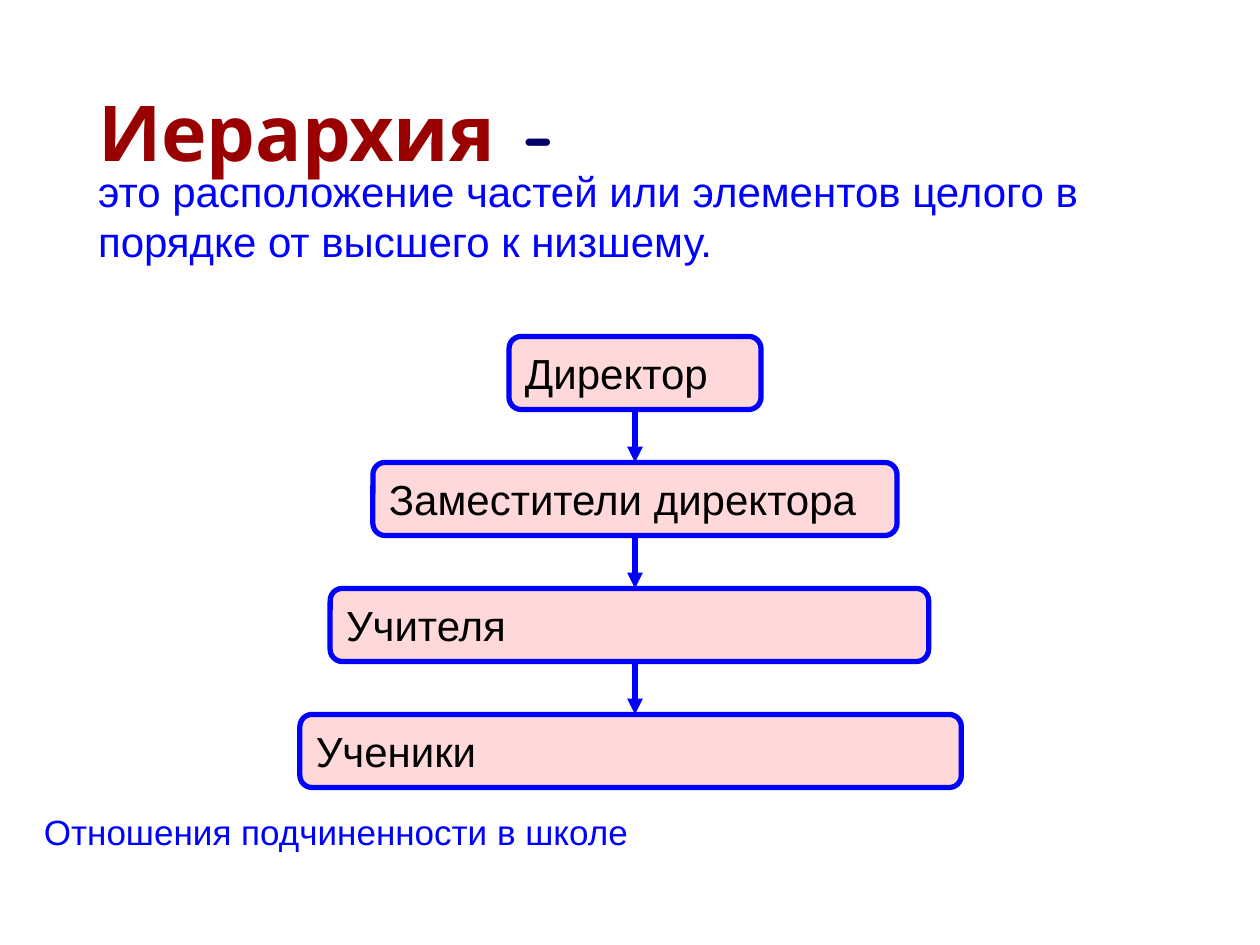
from pptx import Presentation
from pptx.dml.color import RGBColor
from pptx.enum.shapes import MSO_CONNECTOR as CONN, MSO_SHAPE as SHAPE
from pptx.enum.text import MSO_ANCHOR as ANCHOR, PP_ALIGN as ALIGN
from pptx.oxml.ns import qn
from pptx.util import Inches, Pt
from lxml.etree import SubElement

BLUE = RGBColor(0x00, 0x00, 0xFF)
NAVY = RGBColor(0x00, 0x00, 0x66)
RED = RGBColor(0x99, 0x00, 0x00)
PINK = RGBColor(0xFF, 0xD9, 0xD9)
BLACK = RGBColor(0x00, 0x00, 0x00)

AXIS = 5.04
FIRST_TOP = 2.67
STEP = 1
BOX_HEIGHT = 0.58
LEVELS = [
    ("Директор", 4.04, 2),
    ("Заместители директора", 2.96, 4.16),
    ("Учителя", 2.62, 4.75),
    ("Ученики", 2.38, 5.25),
]


class SlideBuilder:
    font = "Arial"
    title_font = "Comic Neue"
    line_width = Pt(3)

    def __init__(self, slide):
        self.slide = slide

    def style(self, r, size, color, font=None, bold=False):
        r.font.name = font or self.font
        r.font.size = Pt(size)
        r.font.bold = bold
        r.font.color.rgb = color

    def text(self, text, left, top, width, height, size, color,
             anchor=ANCHOR.MIDDLE, font=None, bold=False):
        sp = self.slide.shapes.add_textbox(
            Inches(left), Inches(top), Inches(width), Inches(height))
        tf = sp.text_frame
        tf.word_wrap = True
        tf.vertical_anchor = anchor
        tf.text = text
        p = tf.paragraphs[0]
        self.style(p.runs[0], size, color, font, bold)
        return p

    def title(self, term, dash):
        p = self.text(term, 0.68, 0.5, 8.5, 1.08, 44, RED,
                      font=self.title_font, bold=True)
        r = p.add_run()
        r.text = dash
        self.style(r, 44, NAVY, self.title_font, True)

    def caption(self, text):
        p = self.text(text, 0.25, 6.45, 9.45, 0.55, 20, BLUE, ANCHOR.TOP)
        p.line_spacing = 0.8
        pPr = p._p.get_or_add_pPr()
        pPr.set("marL", str(Inches(0.38)))
        pPr.set("indent", str(-Inches(0.38)))

    def box(self, text, left, top, width):
        sp = self.slide.shapes.add_shape(
            SHAPE.ROUNDED_RECTANGLE, Inches(left), Inches(top),
            Inches(width), Inches(BOX_HEIGHT))
        sp.shadow.inherit = False
        sp.fill.solid()
        sp.fill.fore_color.rgb = PINK
        sp.line.color.rgb = BLUE
        sp.line.width = self.line_width
        tf = sp.text_frame
        tf.word_wrap = True
        tf.vertical_anchor = ANCHOR.MIDDLE
        tf.text = text
        p = tf.paragraphs[0]
        p.alignment = ALIGN.LEFT
        self.style(p.runs[0], 24, BLACK)
        return sp

    def arrow(self, upper, lower):
        x = Inches(AXIS)
        line = self.slide.shapes.add_connector(
            CONN.STRAIGHT, x, upper.top + upper.height, x, lower.top)
        if self.on_axis(upper):
            line.begin_connect(upper, 2)
        if self.on_axis(lower):
            line.end_connect(lower, 0)
        line.line.color.rgb = BLUE
        line.line.width = self.line_width
        SubElement(line.line._get_or_add_ln(), qn("a:tailEnd"), type="triangle")
        SubElement(line._element.spPr, qn("a:effectLst"))

    def on_axis(self, sp):
        return abs(sp.left + sp.width // 2 - Inches(AXIS)) < Inches(0.01)


def main():
    prs = Presentation()
    prs.slide_width = Inches(10)
    prs.slide_height = Inches(7.5)
    s = SlideBuilder(prs.slides.add_slide(prs.slide_layouts[6]))

    s.title("Иерархия ", "-")
    s.text("это расположение частей или элементов целого в порядке "
           "от высшего к низшему.", 0.68, 1, 8.74, 1.42, 24, BLUE)
    boxes = [s.box(text, left, FIRST_TOP + i * STEP, width)
             for i, (text, left, width) in enumerate(LEVELS)]
    for upper, lower in zip(boxes, boxes[1:]):
        s.arrow(upper, lower)
    s.caption("Отношения подчиненности в школе")

    prs.save("out.pptx")


if __name__ == "__main__":
    main()
